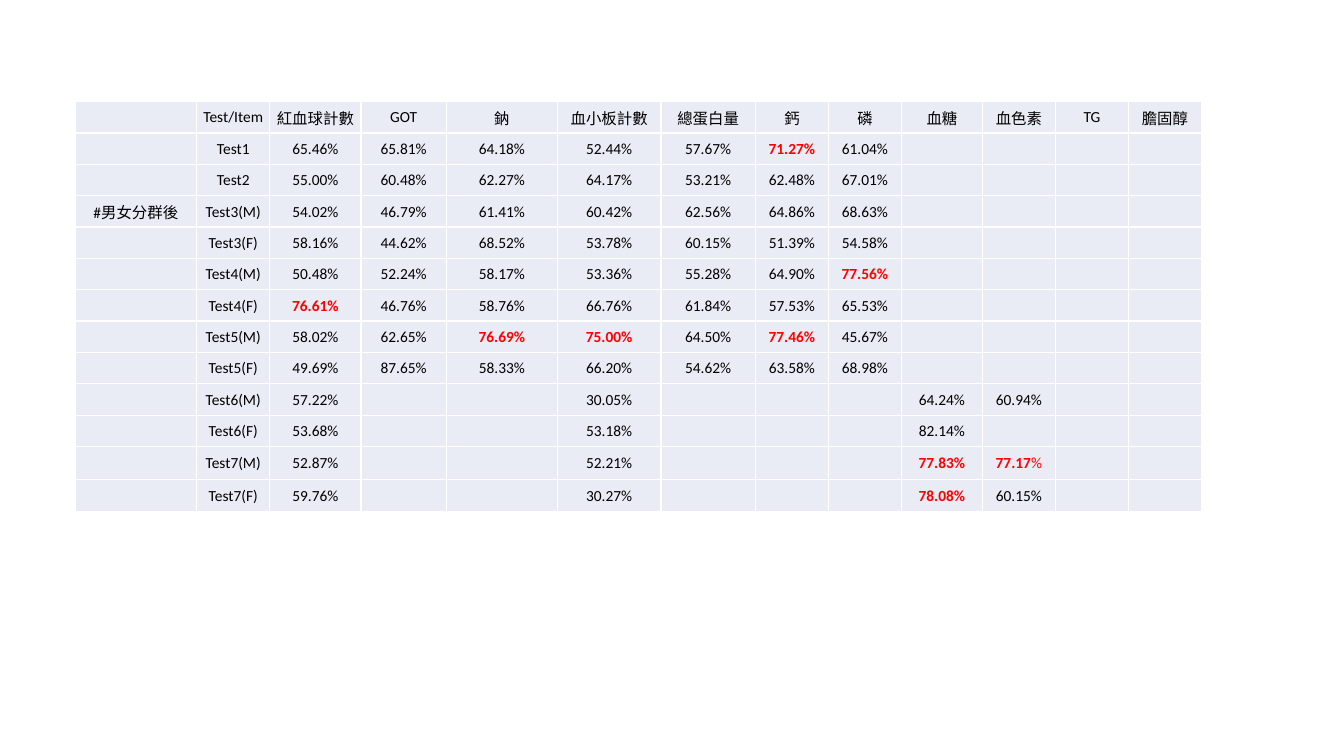
from dataclasses import dataclass

import pptx
import pptx.dml.color
import pptx.enum.text
import pptx.oxml
import pptx.oxml.ns
import pptx.util
from pptx.util import Cm

COLORS = {"cell": "E9EBF5", "border": "FFFFFF", "text": "000000", "best": "FF0000"}
FONT = "Calibri"
FONT_SIZE = pptx.util.Pt(11)
BORDER = pptx.util.Pt(1)
ROW_HEIGHT = 0.79
TALL_ROWS = {"Test7(M)": 0.84}


@dataclass(frozen=True)
class Score:
    text: str
    color: str = "text"
    bold: bool = False


@dataclass(frozen=True)
class Item:
    name: str
    width: float


@dataclass(frozen=True)
class TestRow:
    test: str
    scores: tuple[str, ...]
    best: tuple[str, ...] = ()
    group: str = ""


# Columns: group note, test name, then one per blood item (widths in cm)
ITEMS = [
    Item("", 3.07), Item("Test/Item", 1.84), Item("紅血球計數", 2.3),
    Item("GOT", 2.15), Item("鈉", 2.8), Item("血小板計數", 2.61),
    Item("總蛋白量", 2.38), Item("鈣", 1.84), Item("磷", 1.84),
    Item("血糖", 2.04), Item("血色素", 1.84), Item("TG", 1.84),
    Item("膽固醇", 1.84),
]

# Scores in percent, in item order; best lists the items shown in red
TESTS = [
    TestRow("Test1", ("65.46", "65.81", "64.18", "52.44", "57.67", "71.27", "61.04"), ("鈣",)),
    TestRow("Test2", ("55.00", "60.48", "62.27", "64.17", "53.21", "62.48", "67.01")),
    TestRow("Test3(M)", ("54.02", "46.79", "61.41", "60.42", "62.56", "64.86", "68.63"),
            group="#男女分群後"),
    TestRow("Test3(F)", ("58.16", "44.62", "68.52", "53.78", "60.15", "51.39", "54.58")),
    TestRow("Test4(M)", ("50.48", "52.24", "58.17", "53.36", "55.28", "64.90", "77.56"), ("磷",)),
    TestRow("Test4(F)", ("76.61", "46.76", "58.76", "66.76", "61.84", "57.53", "65.53"),
            ("紅血球計數",)),
    TestRow("Test5(M)", ("58.02", "62.65", "76.69", "75.00", "64.50", "77.46", "45.67"),
            ("鈉", "血小板計數", "鈣")),
    TestRow("Test5(F)", ("49.69", "87.65", "58.33", "66.20", "54.62", "63.58", "68.98")),
    TestRow("Test6(M)", ("57.22", "", "", "30.05", "", "", "", "64.24", "60.94")),
    TestRow("Test6(F)", ("53.68", "", "", "53.18", "", "", "", "82.14")),
    TestRow("Test7(M)", ("52.87", "", "", "52.21", "", "", "", "77.83", "77.17"),
            ("血糖", "血色素")),
    TestRow("Test7(F)", ("59.76", "", "", "30.27", "", "", "", "78.08", "60.15"), ("血糖",)),
]


def score_runs(row: TestRow, item: str, value: str) -> list[Score]:
    """Turn one value into the runs of its cell."""
    if not value:
        return []
    if item not in row.best:
        return [Score(f"{value}%")]
    if item == "血色素":  # its percent sign is red but not bold
        return [Score(value, "best", True), Score("%", "best")]
    return [Score(f"{value}%", "best", True)]


def row_cells(row: TestRow) -> list[list[Score]]:
    labels = [[Score(row.group)] if row.group else [], [Score(row.test)]]
    values = row.scores + ("",) * (len(ITEMS) - 2 - len(row.scores))
    return labels + [score_runs(row, item.name, value)
                     for item, value in zip(ITEMS[2:], values)]


def add_borders(cell) -> None:
    properties = cell._tc.get_or_add_tcPr()
    for side in ("lnL", "lnR", "lnT", "lnB"):
        properties.append(pptx.oxml.parse_xml(
            f'<a:{side} {pptx.oxml.ns.nsdecls("a")} w="{BORDER}"><a:solidFill>'
            f'<a:srgbClr val="{COLORS["border"]}"/></a:solidFill></a:{side}>'))


def fill_cell(cell, runs: list[Score]) -> None:
    add_borders(cell)
    cell.fill.solid()
    cell.fill.fore_color.rgb = pptx.dml.color.RGBColor.from_string(COLORS["cell"])
    cell.margin_left = cell.margin_right = cell.margin_top = Cm(0.02)
    cell.margin_bottom = 0
    cell.vertical_anchor = pptx.enum.text.MSO_ANCHOR.MIDDLE
    paragraph = cell.text_frame.paragraphs[0]
    paragraph.alignment = pptx.enum.text.PP_ALIGN.CENTER
    for score in runs:
        run = paragraph.add_run()
        run.text = score.text
        run.font.name = FONT
        run.font.size = FONT_SIZE
        run.font.bold = score.bold
        run.font.color.rgb = pptx.dml.color.RGBColor.from_string(COLORS[score.color])
    # Empty cells need the small size too, or their rows grow
    paragraph._p.append(pptx.oxml.parse_xml(
        f'<a:endParaRPr {pptx.oxml.ns.nsdecls("a")} sz="{int(FONT_SIZE.pt * 100)}"/>'))


def add_results(slide) -> None:
    header = [[Score(item.name)] if item.name else [] for item in ITEMS]
    grid = [header] + [row_cells(row) for row in TESTS]
    heights = [ROW_HEIGHT] + [TALL_ROWS.get(row.test, ROW_HEIGHT) for row in TESTS]
    results = slide.shapes.add_table(
        len(grid), len(ITEMS), Cm(1.89), Cm(2.56),
        Cm(sum(item.width for item in ITEMS)), Cm(sum(heights))).table
    results.first_row = results.horz_banding = False
    for column, item in zip(results.columns, ITEMS):
        column.width = Cm(item.width)
    for table_row, height, cells in zip(results.rows, heights, grid):
        table_row.height = Cm(height)
        for cell, runs in zip(table_row.cells, cells):
            fill_cell(cell, runs)


def main() -> None:
    presentation = pptx.Presentation()
    presentation.slide_width = Cm(33.87)
    presentation.slide_height = Cm(19.05)
    add_results(presentation.slides.add_slide(presentation.slide_layouts[6]))
    presentation.save("out.pptx")


if __name__ == "__main__":
    main()
